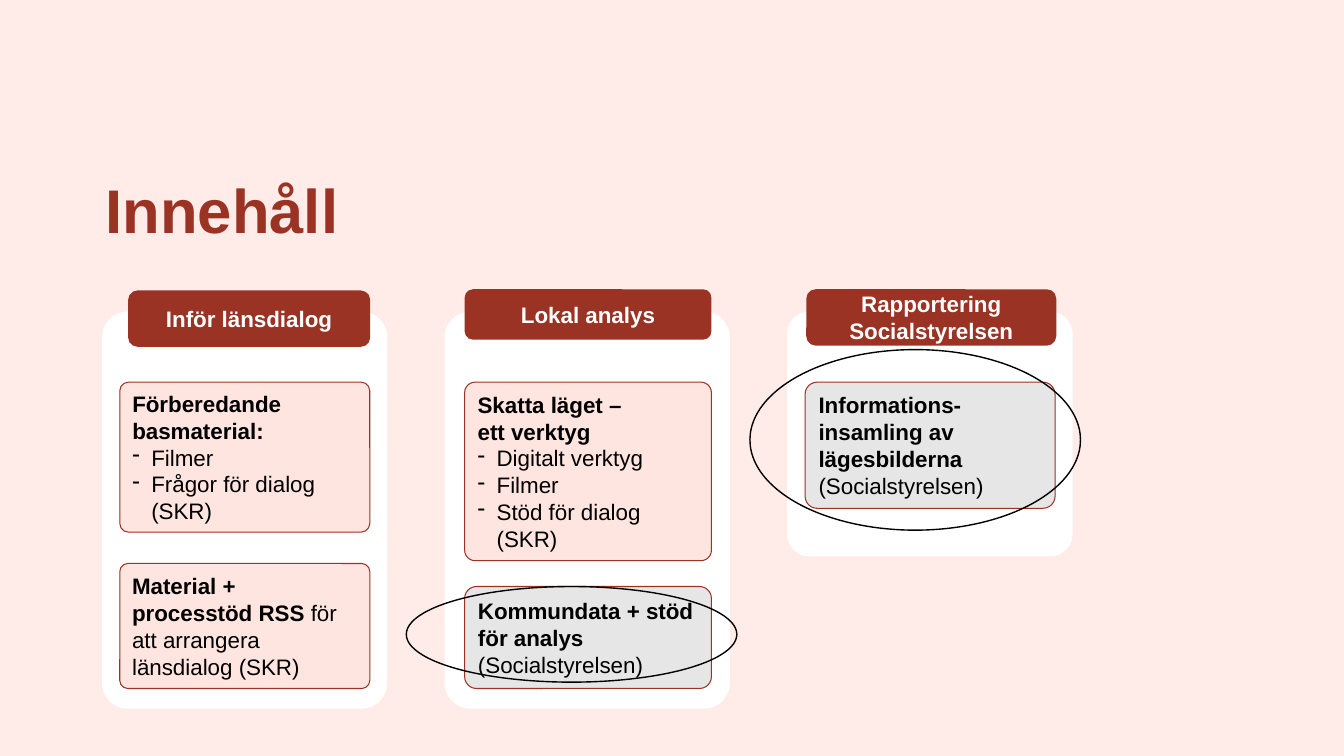
from lxml.etree import SubElement
from pptx import Presentation
from pptx.dml.color import RGBColor
from pptx.enum.shapes import MSO_SHAPE
from pptx.enum.text import MSO_ANCHOR, MSO_AUTO_SIZE, PP_ALIGN
from pptx.oxml.ns import qn
from pptx.util import Cm, Pt

RED, PINK, GREY, WHITE, BLACK = "9A3324", "FFE5DF", "E7E6E6", "FFFFFF", "000000"
BACKGROUND = "FFEBE8"
FIRST_COLUMN, COLUMN_PITCH, COLUMN_WIDTH, COLUMN_TOP = 2.57, 8.635, 7.19, 7.85
COLUMN_HEIGHTS = (10.01, 10.01, 6.17)
BOX_TOP = 9.63

HEADERS = [
    ("Inför länsdialog", (3.23, 7.32, 6.1, 1.42)),
    ("Lokal analys", (11.71, 7.29, 6.22, 1.27)),
    ("Rapportering Socialstyrelsen", (20.32, 7.29, 6.3, 1.42)),
]
BOXES = [
    ((3.02, BOX_TOP, 6.3, 3.78), PINK, 0.058,
     [("Förberedande basmaterial:", "")], ["Filmer", "Frågor för dialog (SKR)"]),
    ((3.02, 14.2, 6.3, 3.15), PINK, 0.064,
     [("Material + processtöd RSS ", "för att arrangera länsdialog (SKR)")], []),
    ((11.71, BOX_TOP, 6.22, 4.5), PINK, 0.059,
     [("Skatta läget –\nett verktyg", "")],
     ["Digitalt verktyg", "Filmer", "Stöd för dialog\n(SKR)"]),
    ((11.71, 14.78, 6.22, 2.57), GREY, 0.116,
     [("Kommundata + stöd för analys ", "(Socialstyrelsen)")], []),
    ((20.29, BOX_TOP, 6.3, 3.18), GREY, 0.096,
     [("Informations-insamling av lägesbilderna ", "(Socialstyrelsen)")], []),
]
RINGS = [(10.24, 14.78, 8.33, 2.41), (18.9, 8.81, 8.33, 4.55)]


def color(hex_code):
    """Turn a hex string into a colour."""
    return RGBColor.from_string(hex_code)


def add_text(paragraph, text, hex_code=BLACK, bold=False, size=16):
    """Add formatted runs, with a line break at each newline."""
    for index, line in enumerate(text.split("\n")):
        if index:
            paragraph.add_line_break()
        run = paragraph.add_run()
        run.text = line
        run.font.name = "Arial"
        run.font.size = Pt(size)
        run.font.bold = bold
        run.font.color.rgb = color(hex_code)


def add_dash(paragraph):
    """Give a paragraph a hanging dash bullet."""
    properties = paragraph._p.get_or_add_pPr()
    properties.set("marL", str(Cm(0.48)))
    properties.set("indent", str(-Cm(0.48)))
    SubElement(properties, qn("a:buChar")).set("char", "-")


def add_panel(slide, kind, place, fill=None, line=None, width=0.75, corner=None):
    """Add a flat shape with optional fill, outline and corner radius."""
    shape = slide.shapes.add_shape(kind, *[Cm(length) for length in place])
    shape.shadow.inherit = False
    if fill:
        shape.fill.solid()
        shape.fill.fore_color.rgb = color(fill)
    else:
        shape.fill.background()
    if line:
        shape.line.color.rgb = color(line)
        shape.line.width = Pt(width)
    else:
        shape.line.fill.background()
    if corner:
        shape.adjustments[0] = corner
    shape.text_frame.vertical_anchor = MSO_ANCHOR.MIDDLE
    return shape


def add_columns(slide):
    """Add the white column backgrounds."""
    for index, height in enumerate(COLUMN_HEIGHTS):
        left = FIRST_COLUMN + index * COLUMN_PITCH
        place = (left, COLUMN_TOP, COLUMN_WIDTH, height)
        add_panel(slide, MSO_SHAPE.ROUNDED_RECTANGLE, place, WHITE, corner=0.091)


def add_box(slide, place, fill, corner, statements, items):
    """Add an outlined box with a statement and a dashed list."""
    shape = add_panel(slide, MSO_SHAPE.ROUNDED_RECTANGLE, place, fill, RED, corner=corner)
    frame = shape.text_frame
    frame.word_wrap = True
    frame.auto_size = MSO_AUTO_SIZE.SHAPE_TO_FIT_TEXT
    paragraph = frame.paragraphs[0]
    paragraph.alignment = PP_ALIGN.LEFT
    for strong, plain in statements:
        add_text(paragraph, strong, bold=True)
        if plain:
            add_text(paragraph, plain)
    for item in items:
        paragraph = frame.add_paragraph()
        paragraph.alignment = PP_ALIGN.LEFT
        add_dash(paragraph)
        add_text(paragraph, item)


def add_header(slide, text, place):
    """Add a red column header."""
    shape = add_panel(slide, MSO_SHAPE.ROUNDED_RECTANGLE, place, RED)
    shape.text_frame.word_wrap = True
    paragraph = shape.text_frame.paragraphs[0]
    paragraph.alignment = PP_ALIGN.CENTER
    add_text(paragraph, text, WHITE, bold=True)


def set_title(slide, text):
    """Place and format the slide title."""
    title = slide.shapes.title
    title.left, title.top, title.width, title.height = Cm(2.41), Cm(4.14), Cm(13.74), Cm(2.21)
    title.text_frame.vertical_anchor = MSO_ANCHOR.BOTTOM
    paragraph = title.text_frame.paragraphs[0]
    paragraph.alignment = PP_ALIGN.LEFT
    paragraph.line_spacing = 0.9
    add_text(paragraph, text, RED, bold=True, size=44)


def main():
    """Build and save the slide."""
    presentation = Presentation()
    presentation.slide_width, presentation.slide_height = Cm(33.87), Cm(19.05)
    slide = presentation.slides.add_slide(presentation.slide_layouts[5])
    slide.background.fill.solid()
    slide.background.fill.fore_color.rgb = color(BACKGROUND)
    set_title(slide, "Innehåll")
    add_columns(slide)
    for box in BOXES:
        add_box(slide, *box)
    for text, place in HEADERS:
        add_header(slide, text, place)
    for place in RINGS:
        add_panel(slide, MSO_SHAPE.OVAL, place, line=BLACK, width=1)
    presentation.save("out.pptx")


if __name__ == "__main__":
    main()
